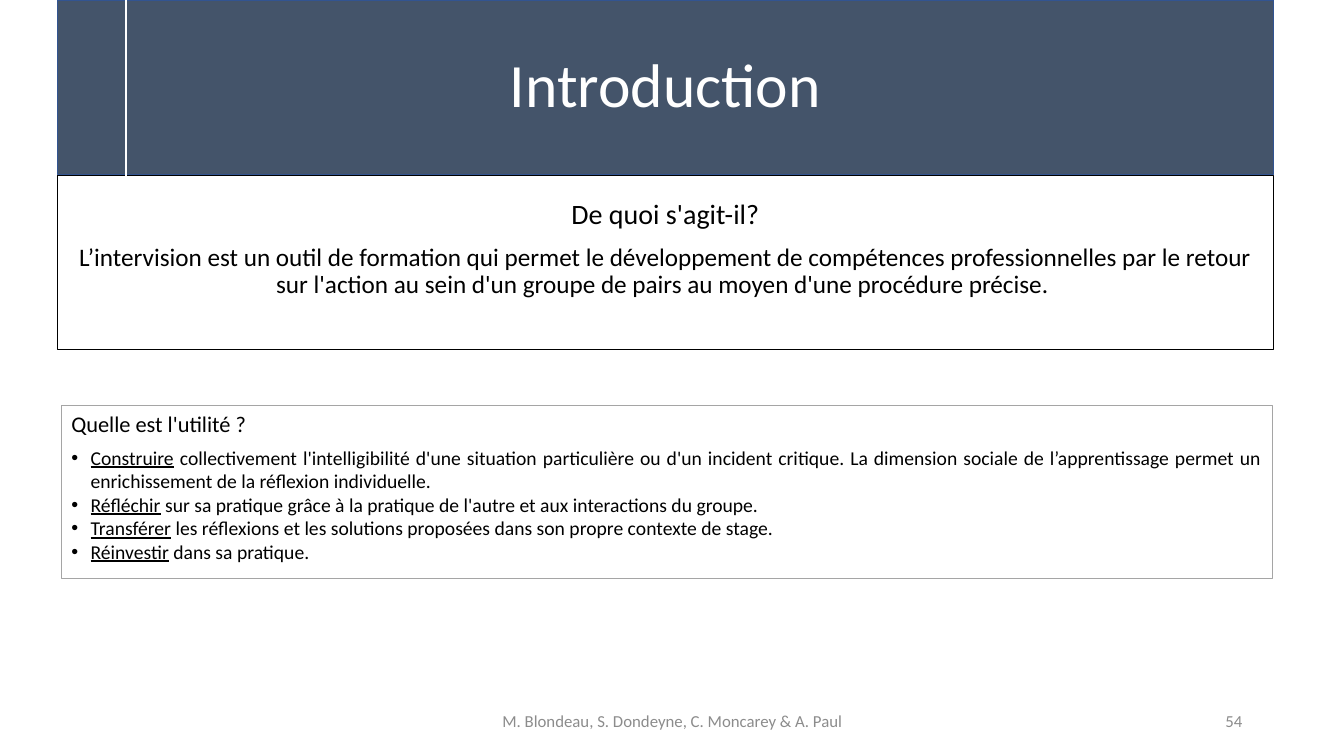
import pptx
import pptx.util
import pptx.dml.color
import pptx.enum.shapes
import pptx.enum.text
from lxml import etree
from pptx.oxml.ns import qn
from pptx.util import Inches, Pt

COLORS = {
    "banner": "44546A",
    "banner_line": "325491",
    "white": "FFFFFF",
    "black": "000000",
    "grey_line": "A5A5A5",
    "footer": "8C8C8C",
}
ALIGN = pptx.enum.text.PP_ALIGN
ANCHOR = pptx.enum.text.MSO_ANCHOR

USES = [
    ("Construire", " collectivement l'intelligibilité d'une situation particulière ou d'un "
     "incident critique. La dimension sociale de l’apprentissage permet un enrichissement "
     "de la réflexion individuelle."),
    ("Réfléchir", " sur sa pratique grâce à la pratique de l'autre et aux interactions du groupe."),
    ("Transférer", " les réflexions et les solutions proposées dans son propre contexte de stage."),
    ("Réinvestir", " dans sa pratique."),
]


def color(name):
    return pptx.dml.color.RGBColor.from_string(COLORS[name])


def format_font(font, size, color_name):
    font.name = "Calibri"
    font.size = Pt(size)
    font.color.rgb = color(color_name)


def add_panel(slide, box, fill, line, anchor):
    """Add an outlined rectangle and return its text frame."""
    shape = slide.shapes.add_shape(
        pptx.enum.shapes.MSO_SHAPE.RECTANGLE, *map(Inches, box))
    shape.shadow.inherit = False
    shape.fill.solid()
    shape.fill.fore_color.rgb = color(fill)
    shape.line.color.rgb = color(line)
    shape.line.width = Pt(1)
    frame = shape.text_frame
    frame.word_wrap = True
    frame.vertical_anchor = anchor
    return frame


def add_banner(slide, box):
    left, top, width, height = box
    frame = add_panel(slide, box, "banner", "banner_line", ANCHOR.MIDDLE)
    frame.text = "Introduction"
    title = frame.paragraphs[0]
    title.alignment = ALIGN.CENTER
    title.line_spacing = 0.9
    format_font(title.runs[0].font, 44, "white")

    divider_x = Inches(left + 0.68)
    divider = slide.shapes.add_connector(
        pptx.enum.shapes.MSO_CONNECTOR.STRAIGHT,
        divider_x, Inches(top), divider_x, Inches(top + height + 0.02))
    divider.line.color.rgb = color("white")
    divider.line.width = Pt(1)
    etree.SubElement(divider._element.spPr, qn("a:effectLst"))


def add_definition(slide, box):
    frame = add_panel(slide, box, "white", "black", ANCHOR.TOP)
    frame.margin_top = Inches(0.25)
    frame.text = (
        "De quoi s'agit-il?\n"
        "L’intervision est un outil de formation qui permet le développement de compétences "
        "professionnelles par le retour sur l'action au sein d'un groupe de pairs au moyen "
        "d'une procédure précise.\u00a0")
    question, answer = frame.paragraphs
    answer.space_before = Pt(10)
    for paragraph, size in ((question, 20), (answer, 18)):
        paragraph.alignment = ALIGN.CENTER
        paragraph.line_spacing = 0.9
        format_font(paragraph.runs[0].font, size, "black")


def add_bullet(paragraph, indent):
    properties = paragraph._p.get_or_add_pPr()
    properties.set("marL", str(Inches(indent)))
    properties.set("indent", str(-Inches(indent)))
    etree.SubElement(properties, qn("a:buFont"), typeface="Arial")
    etree.SubElement(properties, qn("a:buChar"), char="•")


def add_uses(slide, box):
    frame = add_panel(slide, box, "white", "grey_line", ANCHOR.TOP)
    frame.text = "Quelle est l'utilité ?"
    heading = frame.paragraphs[0]
    heading.alignment = ALIGN.LEFT
    heading.space_after = Pt(6)
    format_font(heading.runs[0].font, 16, "black")
    for verb, explanation in USES:
        paragraph = frame.add_paragraph()
        add_bullet(paragraph, 0.19)
        paragraph.alignment = ALIGN.JUSTIFY
        for text, underlined in ((verb, True), (explanation, False)):
            run = paragraph.add_run()
            run.text = text
            format_font(run.font, 14, "black")
            run.font.underline = underlined


def add_footer_text(slide, box, text, alignment):
    frame = slide.shapes.add_textbox(*map(Inches, box)).text_frame
    frame.word_wrap = True
    frame.vertical_anchor = ANCHOR.MIDDLE
    frame.text = text
    paragraph = frame.paragraphs[0]
    paragraph.alignment = alignment
    format_font(paragraph.runs[0].font, 12, "footer")


def main():
    presentation = pptx.Presentation()
    presentation.slide_width = Inches(13.33)
    presentation.slide_height = Inches(7.5)
    slide = presentation.slides.add_slide(presentation.slide_layouts[6])

    add_footer_text(slide, (4.42, 6.95, 4.5, 0.4),
                    "M. Blondeau, S. Dondeyne, C. Moncarey & A. Paul", ALIGN.CENTER)
    add_footer_text(slide, (9.42, 6.95, 3, 0.4), "54", ALIGN.RIGHT)
    add_definition(slide, (0.57, 1.74, 12.06, 1.73))
    add_uses(slide, (0.61, 4.02, 12.01, 1.72))
    add_banner(slide, (0.57, 0, 12.06, 1.73))
    presentation.save("out.pptx")


if __name__ == "__main__":
    main()
